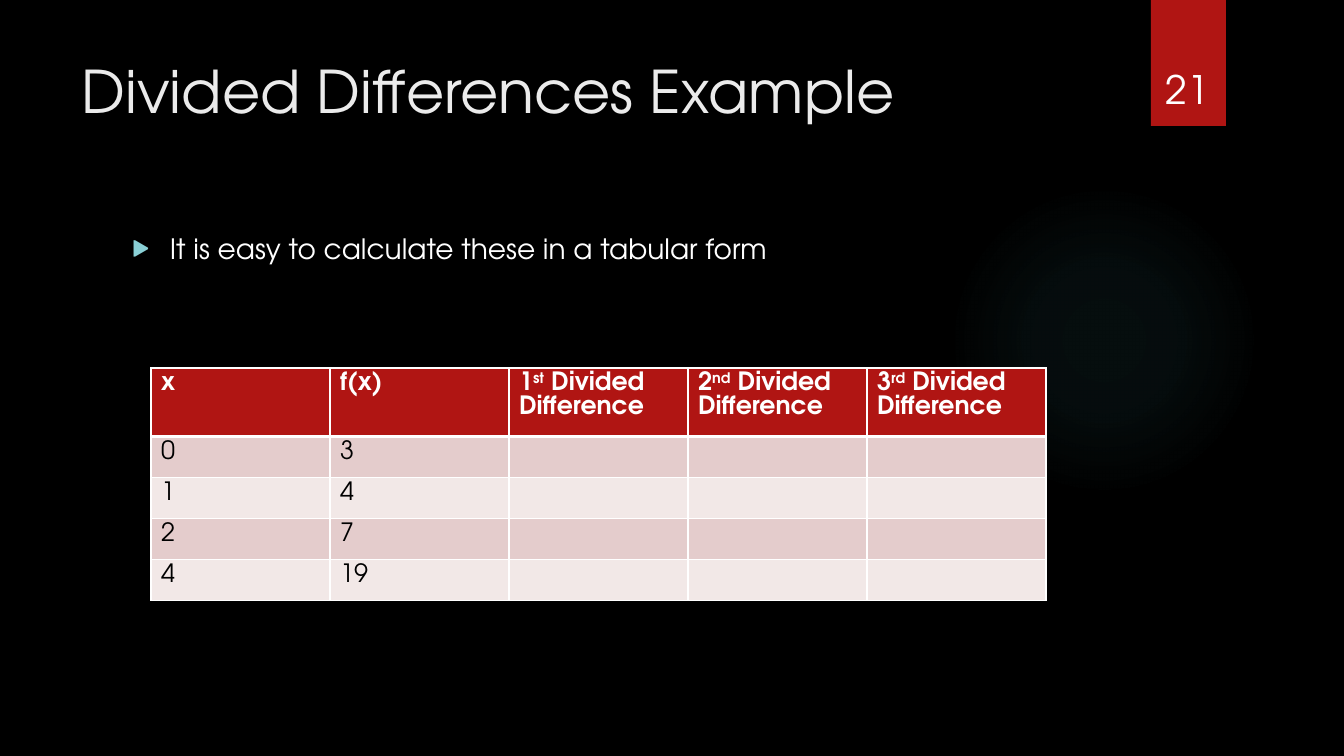
from lxml import etree
from pptx import Presentation
from pptx.dml.color import RGBColor
from pptx.enum.shapes import MSO_SHAPE as SHAPE
from pptx.enum.text import MSO_ANCHOR as ANCHOR, PP_ALIGN as ALIGN
from pptx.oxml import parse_xml
from pptx.oxml.ns import nsdecls, qn
from pptx.util import Pt

PX = 9071
FONT = "TeX Gyre Adventor"
RED = "B01513"
WHITE = "FFFFFF"


def rgb(color):
    return RGBColor.from_string(color)


def add_run(p, text, size, color, bold=False):
    r = p.add_run()
    r.text = text
    r.font.name = FONT
    r.font.size = Pt(size)
    r.font.bold = bold
    r.font.color.rgb = rgb(color)
    return r


prs = Presentation()
prs.slide_width = 1344 * PX
prs.slide_height = 756 * PX
s = prs.slides.add_slide(prs.slide_layouts[6])
s.background.fill.solid()
s.background.fill.fore_color.rgb = rgb("000000")

glow = s.shapes.add_shape(SHAPE.OVAL, 949 * PX, 185 * PX, 310 * PX, 310 * PX)
glow.shadow.inherit = False
glow.line.fill.background()
stops = "".join(
    f'<a:gs pos="{pos}000"><a:srgbClr val="50B9C1"><a:alpha val="{alpha}000"/></a:srgbClr></a:gs>'
    for pos, alpha in [(0, 7), (36, 6), (69, 0)]
)
glow_fill = parse_xml(
    f'<a:gradFill {nsdecls("a")}><a:gsLst>{stops}</a:gsLst><a:path path="circle">'
    '<a:fillToRect l="50000" t="50000" r="50000" b="50000"/></a:path></a:gradFill>'
)
glow.element.spPr.find(qn("a:prstGeom")).addnext(glow_fill)

ribbon = s.shapes.add_shape(SHAPE.RECTANGLE, 1151 * PX, 0, 75 * PX, 126 * PX)
ribbon.shadow.inherit = False
ribbon.fill.solid()
ribbon.fill.fore_color.rgb = rgb(RED)
ribbon.line.fill.background()

texts = [
    ("Divided Differences Example", 72, 50, 1037, 154, 42, "EBEBEB"),
    ("It is easy to calculate these in a tabular form", 122, 227, 986, 463, 20, WHITE),
    ("21", 1141, 32, 93, 85, 28, WHITE),
]
frames = []
for text, x, y, w, h, size, color in texts:
    tf = s.shapes.add_textbox(x * PX, y * PX, w * PX, h * PX).text_frame
    tf.word_wrap = True
    add_run(tf.paragraphs[0], text, size, color)
    frames.append(tf)

title, body, number = frames
number.vertical_anchor = ANCHOR.BOTTOM
number.paragraphs[0].alignment = ALIGN.CENTER

pPr = body.paragraphs[0]._p.get_or_add_pPr()
pPr.set("marL", str(38 * PX))
pPr.set("indent", str(-38 * PX))
bullet_color = etree.SubElement(pPr, qn("a:buClr"))
etree.SubElement(bullet_color, qn("a:srgbClr"), val="8AD0D6")
etree.SubElement(pPr, qn("a:buSzPct"), val="80000")
etree.SubElement(pPr, qn("a:buFont"), typeface=FONT)
etree.SubElement(pPr, qn("a:buChar"), char="▶")

header = [("x",), ("f(x)",)] + [
    (n, suffix, " Divided Difference")
    for n, suffix in [("1", "st"), ("2", "nd"), ("3", "rd")]
]
values = [("0", "3"), ("1", "4"), ("2", "7"), ("4", "19")]
rows = [header] + [[(x,), (fx,), (), (), ()] for x, fx in values]

table = s.shapes.add_table(5, 5, 151 * PX, 368 * PX, 895 * PX, 205 * PX).table
for col in table.columns:
    col.width = 179 * PX
for i, row in enumerate(rows):
    table.rows[i].height = 41 * PX
    for j, parts in enumerate(row):
        cell = table.cell(i, j)
        cell.margin_top = cell.margin_bottom = 4 * PX
        tcPr = cell._tc.get_or_add_tcPr()
        for side in "LRTB":
            thick = (i == 0 and side == "B") or (i == 1 and side == "T")
            ln = etree.SubElement(tcPr, qn(f"a:ln{side}"), w=str(Pt(3 if thick else 1)))
            line_fill = etree.SubElement(ln, qn("a:solidFill"))
            etree.SubElement(line_fill, qn("a:srgbClr"), val=WHITE)
        cell.fill.solid()
        cell.fill.fore_color.rgb = rgb(RED if i == 0 else ("F2E8E7", "E4CCCC")[i % 2])
        p = cell.text_frame.paragraphs[0]
        for k, part in enumerate(parts):
            r = add_run(p, part, 18, "000000" if i else WHITE, i == 0)
            if k == 1:
                r._r.get_or_add_rPr().set("baseline", "30000")

prs.save("out.pptx")
